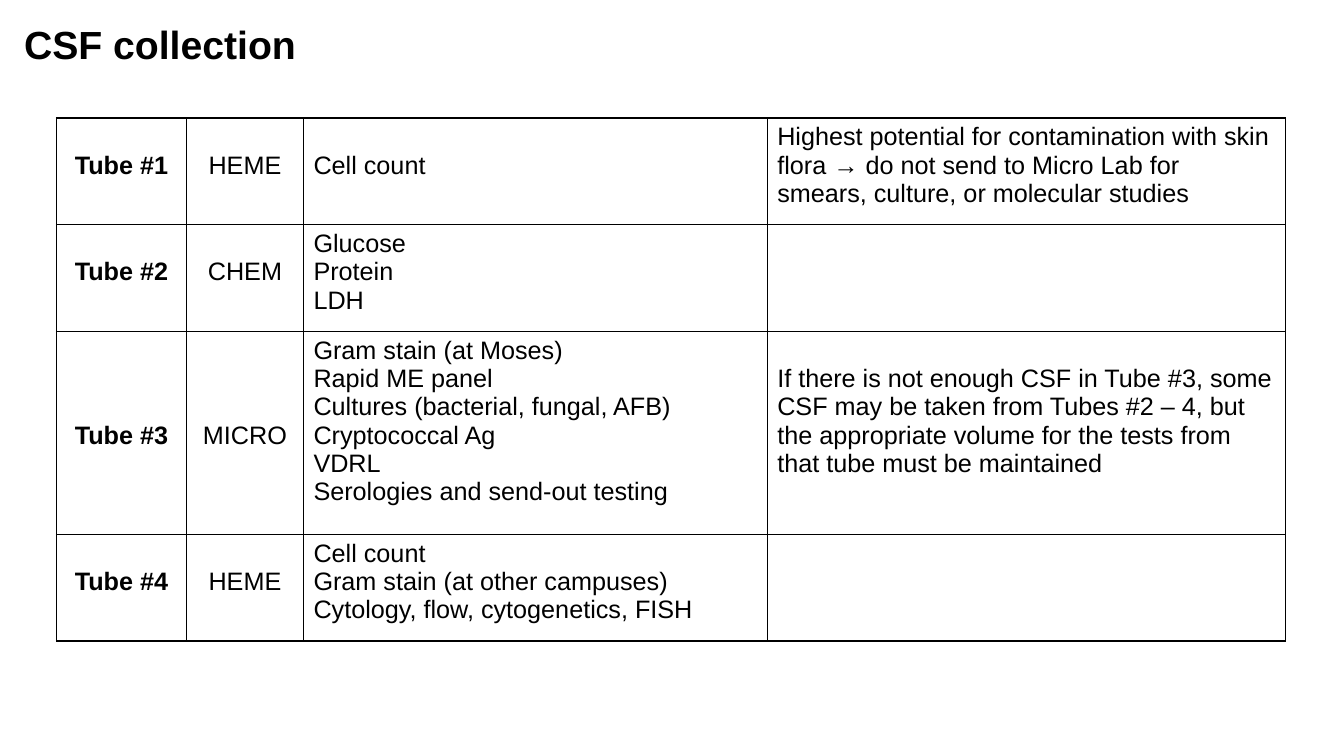
from lxml.etree import SubElement as Sub
from pptx import Presentation
from pptx.dml.color import RGBColor as RGB
from pptx.enum.text import MSO_ANCHOR as Anchor, PP_ALIGN as Align
from pptx.oxml.ns import qn
from pptx.util import Inches, Pt

COLORS = {"ink": "000000"}
LINE = 0.28  # height of one line of table text, in inches
COLS = [1.29, 1.16, 4.6, 5.14]

# Row height, then (text, lines of space above it) for each cell
ROWS = [
    (1.06, [
        ("Tube #1", 1),
        ("HEME", 1),
        ("Cell count", 1),
        ("Highest potential for contamination with skin flora → do not send "
         "to Micro Lab for smears, culture, or molecular studies", 0),
    ]),
    (1.06, [
        ("Tube #2", 1),
        ("CHEM", 1),
        ("Glucose\nProtein\nLDH", 0),
        ("", 0),
    ]),
    (2.01, [
        ("Tube #3", 3),
        ("MICRO", 3),
        ("Gram stain (at Moses)\nRapid ME panel\n"
         "Cultures (bacterial, fungal, AFB)\nCryptococcal Ag\nVDRL\n"
         "Serologies and send-out testing", 0),
        ("If there is not enough CSF in Tube #3, some CSF may be taken from "
         "Tubes #2 – 4, but the appropriate volume for the tests from that "
         "tube must be maintained", 1),
    ]),
    (1.06, [
        ("Tube #4", 1),
        ("HEME", 1),
        ("Cell count\nGram stain (at other campuses)\n"
         "Cytology, flow, cytogenetics, FISH", 0),
        ("", 0),
    ]),
]


def set_font(para, size, bold):
    font = para.font
    font.name = "Arial"
    font.size = Pt(size)
    font.bold = bold
    font.color.rgb = RGB.from_string(COLORS["ink"])


def add_border(cell):
    props = cell._tc.get_or_add_tcPr()
    for side in ("lnL", "lnR", "lnT", "lnB"):
        line = Sub(props, qn(f"a:{side}"), w=str(Pt(1)))
        fill = Sub(line, qn("a:solidFill"))
        Sub(fill, qn("a:srgbClr"), val=COLORS["ink"])


prs = Presentation()
prs.slide_width = Inches(13.33)
prs.slide_height = Inches(7.5)
slide = prs.slides.add_slide(prs.slide_layouts[6])

# Title
box = slide.shapes.add_textbox(Inches(0.14), 0, Inches(11.5), Inches(0.93))
frame = box.text_frame
frame.word_wrap = True
frame.vertical_anchor = Anchor.MIDDLE
frame.text = "CSF collection"
title = frame.paragraphs[0]
title.line_spacing = 0.9
set_font(title, 28, True)

# Table of tubes
height = sum(row[0] for row in ROWS)
table = slide.shapes.add_table(
    len(ROWS), len(COLS), Inches(0.56), Inches(1.17),
    Inches(sum(COLS)), Inches(height)).table
table.first_row = False
table.horz_banding = False
for col, width in zip(table.columns, COLS):
    col.width = Inches(width)

for row, (height, items) in zip(table.rows, ROWS):
    row.height = Inches(height)
    for i, (text, skip) in enumerate(items):
        cell = row.cells[i]
        cell.text = text
        cell.margin_top = Inches(0.05 + skip * LINE)
        add_border(cell)
        cell.fill.background()
        for para in cell.text_frame.paragraphs:
            para.alignment = Align.CENTER if i < 2 else Align.LEFT
            set_font(para, 18, i == 0)

prs.save("out.pptx")
